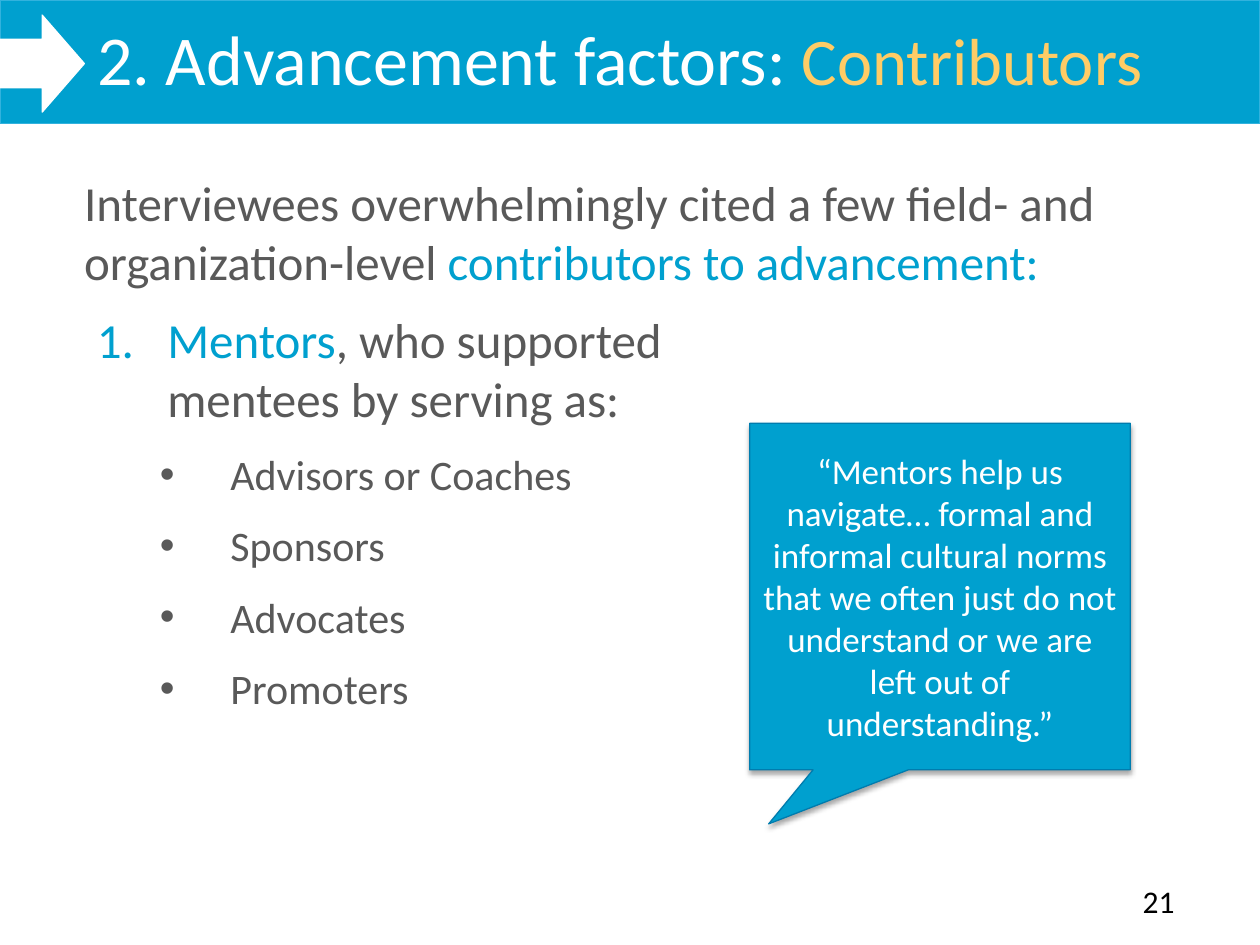
from lxml import etree
from pptx import Presentation
from pptx.dml.color import RGBColor
from pptx.enum.shapes import MSO_SHAPE
from pptx.enum.text import MSO_ANCHOR, MSO_AUTO_SIZE, PP_ALIGN
from pptx.oxml import parse_xml
from pptx.oxml.ns import nsdecls, qn
from pptx.util import Emu, Inches, Pt

RECT, ARROW, CALLOUT = (MSO_SHAPE.RECTANGLE, MSO_SHAPE.RIGHT_ARROW,
                        MSO_SHAPE.RECTANGULAR_CALLOUT)
TOP, MIDDLE = MSO_ANCHOR.TOP, MSO_ANCHOR.MIDDLE
LEFT, CENTER = PP_ALIGN.LEFT, PP_ALIGN.CENTER
NO_FIT, GROW = MSO_AUTO_SIZE.NONE, MSO_AUTO_SIZE.SHAPE_TO_FIT_TEXT

THEME = {
    "font": "Calibri",
    "blue": "00A0CF", "band_edge": "32B2DD", "quote_edge": "007CAE",
    "gold": "FFCC66", "grey": "595959", "white": "FFFFFF", "black": "000000",
    "title": 40, "title_accent": 38, "body": 28, "sub": 24, "quote": 20, "number": 18,
    "edge": 0.75, "gap": 12,
}

prs = Presentation()
prs.slide_width, prs.slide_height = Inches(10), Inches(7.5)
slide = prs.slides.add_slide(prs.slide_layouts[5])
shapes = slide.shapes

# Shared left edge of the title and the list, and right edge of the arrow
margin = Inches(0.67)
list_right = Inches(5.95)


def add_run(paragraph, text, size, color):
    run = paragraph.add_run()
    run.text = text
    run.font.name = THEME["font"]
    run.font.size = Pt(THEME[size])
    run.font.color.rgb = RGBColor.from_string(THEME[color])


def add_panel(preset, left, top, width, height, fill, edge):
    panel = shapes.add_shape(preset, left, top, width, height)
    panel.shadow.inherit = False
    panel.fill.solid()
    panel.fill.fore_color.rgb = RGBColor.from_string(THEME[fill])
    panel.line.color.rgb = RGBColor.from_string(THEME[edge])
    panel.line.width = Pt(THEME["edge"])
    return panel


# Header band and arrow
add_panel(RECT, 0, 0, prs.slide_width, Inches(0.98), "blue", "band_edge")
add_panel(ARROW, 0, Inches(0.12), margin, Inches(0.77), "white", "white")

# Title, brought in front of the band
title = shapes.title
shapes.element.append(title.element)
title.left, title.top = margin, Inches(0.07)
title.width, title.height = prs.slide_width - margin, Inches(1.25)
title.text_frame.vertical_anchor = TOP
title.text_frame.auto_size = NO_FIT
heading = title.text_frame.paragraphs[0]
heading.alignment = LEFT
add_run(heading, "2. Advancement factors: ", "title", "white")
add_run(heading, "Contributors", "title_accent", "gold")

# Page number
page = shapes.add_textbox(Inches(8.97), Inches(6.95), Inches(0.53), Inches(0.4))
add_run(page.text_frame.paragraphs[0], "21", "number", "black")

# Introduction
intro = shapes.add_textbox(Inches(0.57), Inches(1.32), Inches(9.43), Inches(1.04))
intro.text_frame.word_wrap = True
intro.text_frame.auto_size = GROW
lead = intro.text_frame.paragraphs[0]
lead.space_after = Pt(THEME["gap"])
add_run(lead, "Interviewees overwhelmingly cited a few field- and organization-level ",
        "body", "grey")
add_run(lead, "contributors to advancement:", "body", "blue")

# Quotation callout with a soft shadow below
quote = add_panel(CALLOUT, list_right, Inches(3.36), Inches(3.02), Inches(2.75),
                  "blue", "quote_edge")
quote.adjustments[0], quote.adjustments[1] = -0.45, 0.656
quote.element.spPr.find(qn("a:effectLst")).append(parse_xml(
    f'<a:outerShdw {nsdecls("a")} blurRad="{Pt(3.1)}" dist="{Pt(1.8)}" dir="5400000" '
    f'rotWithShape="0"><a:srgbClr val="{THEME["black"]}"><a:alpha val="35000"/>'
    '</a:srgbClr></a:outerShdw>'))
quote.text_frame.word_wrap = True
quote.text_frame.vertical_anchor = MIDDLE
saying = quote.text_frame.paragraphs[0]
saying.alignment = CENTER
add_run(saying, "“Mentors help us navigate… formal and informal cultural norms that we "
        "often just do not understand or we are left out of understanding.”",
        "quote", "white")

# Numbered contributor with its bulleted roles
contributors = shapes.add_textbox(margin, Inches(2.41), list_right - margin, Inches(3.33))
frame = contributors.text_frame
frame.word_wrap = True
frame.auto_size = GROW
hanging = Inches(0.56)
items = [
    (0, [("Mentors", "body", "blue"),
         (", who supported mentees by serving as:", "body", "grey")]),
] + [(1, [(role, "sub", "grey")])
     for role in ("Advisors or Coaches", "Sponsors", "Advocates", "Promoters")]

for index, (level, runs) in enumerate(items):
    item = frame.add_paragraph() if index else frame.paragraphs[0]
    item.level = level
    item.space_after = Pt(THEME["gap"])
    props = item._p.get_or_add_pPr()
    props.set("marL", str(Emu(hanging + level * Inches(0.5))))
    props.set("indent", str(-hanging))
    if level:
        etree.SubElement(props, qn("a:buFont"), typeface="Arial")
        etree.SubElement(props, qn("a:buChar"), char="•")
    else:
        etree.SubElement(props, qn("a:buFont"), typeface="+mj-lt")
        etree.SubElement(props, qn("a:buAutoNum"), type="arabicPeriod")
    for text, size, color in runs:
        add_run(item, text, size, color)

prs.save("out.pptx")
